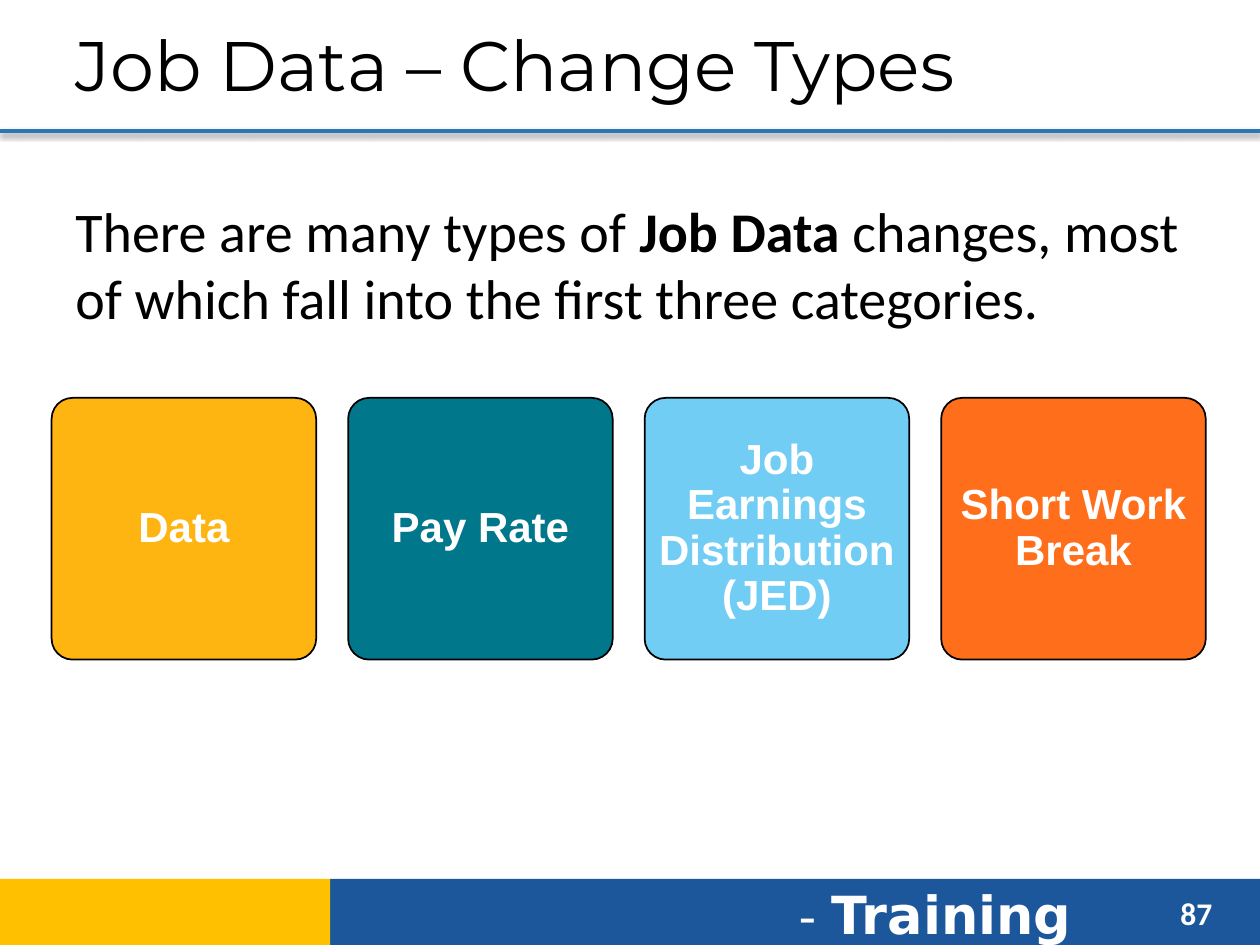
from lxml.etree import SubElement
from pptx import Presentation
from pptx.dml.color import RGBColor
from pptx.enum.shapes import MSO_CONNECTOR, MSO_SHAPE
from pptx.enum.text import MSO_ANCHOR, PP_ALIGN
from pptx.oxml.ns import qn
from pptx.util import Inches, Pt

WIDTH, HEIGHT = Inches(10), Inches(7.5)
BLACK, WHITE = "000000", "FFFFFF"
CARDS = [
    ("Data", "FFB511"),
    ("Pay Rate", "00778B"),
    ("Job Earnings Distribution (JED)", "72CDF4"),
    ("Short Work Break", "FF6E1B"),
]


def color(value):
    """Turn a hex string into a colour."""
    return RGBColor.from_string(value)


def share(left, top, width, height):
    """Turn shares of the slide's size into a box of lengths."""
    return (round(left * WIDTH), round(top * HEIGHT),
            round(width * WIDTH), round(height * HEIGHT))


def set_font(font, name, size, value, bold=False):
    """Set the face, size, colour and weight of a font."""
    font.name, font.size, font.bold = name, Pt(size), bold
    font.color.rgb = color(value)


def add_block(page, box, fill, kind=MSO_SHAPE.RECTANGLE):
    """Add a filled shape without outline or shadow."""
    block = page.shapes.add_shape(kind, *box)
    block.shadow.inherit = False
    block.fill.solid()
    block.fill.fore_color.rgb = color(fill)
    block.line.fill.background()
    return block


def add_text(page, box, spans, name, size, value, anchor=MSO_ANCHOR.TOP):
    """Add a wrapping text box of (text, bold) spans in one font."""
    frame = page.shapes.add_textbox(*box).text_frame
    frame.word_wrap = True
    frame.vertical_anchor = anchor
    para = frame.paragraphs[0]
    set_font(para.font, name, size, value)
    for text, bold in spans:
        span = para.add_run()
        span.text = text
        set_font(span.font, name, size, value, bold)
    return para


def add_header(page, box):
    """Add the title and the shadowed rule along the bottom of the box."""
    left, top, width, height = box
    margin = round(width * 0.05)
    add_text(page, (left + margin, top + round(height * 0.04),
                    width - 2 * margin, round(height * 0.89)),
             [("Job Data – Change Types", False)], "Montserrat", 40, BLACK,
             MSO_ANCHOR.MIDDLE)
    rule = page.shapes.add_connector(
        MSO_CONNECTOR.STRAIGHT, left, top + height, left + width, top + height)
    rule.line.color.rgb = color("2E75B6")
    rule.line.width = Pt(2.25)
    effects = SubElement(rule._element.spPr, qn("a:effectLst"))
    shadow = SubElement(effects, qn("a:outerShdw"), blurRad=str(Pt(3.1)),
                        dist=str(Pt(1.6)), dir="5400000", rotWithShape="0")
    tint = SubElement(shadow, qn("a:srgbClr"), val=BLACK)
    SubElement(tint, qn("a:alpha"), val="38000")


def add_cards(page, box):
    """Spread the change types evenly across the box as rounded cards."""
    left, top, width, height = box
    card_width = Inches(2.1)
    pitch = (width - card_width) / (len(CARDS) - 1)
    for column, (label, fill) in enumerate(CARDS):
        card = add_block(page, (left + round(column * pitch), top, card_width, height),
                         fill, MSO_SHAPE.ROUNDED_RECTANGLE)
        card.adjustments[0] = 0.08
        card.line.color.rgb = color(BLACK)
        card.line.width = Pt(1)
        frame = card.text_frame
        frame.word_wrap = True
        frame.vertical_anchor = MSO_ANCHOR.MIDDLE
        frame.margin_left = frame.margin_right = Inches(0.05)
        para = frame.paragraphs[0]
        para.text = label
        para.alignment = PP_ALIGN.CENTER
        para.line_spacing = 0.9
        set_font(para.font, "Arial", 24, WHITE, True)


def add_footer(page, box):
    """Add the two-colour band with its course name and page number."""
    left, top, width, height = box
    split = round(width * 0.262)
    add_block(page, (left + split, top, width - split, height), "1D579B")
    add_block(page, (left, top, split, height), "FFC000")
    para = add_text(page, (left + round(width * 0.624), top - round(height * 0.05),
                           round(width * 0.28), round(height * 1.15)),
                    [("- ", False), ("Training", True)], "DejaVu Sans", 30, WHITE)
    para.runs[0].font.size = Pt(28)
    add_text(page, (left + round(width * 0.927), top + round(height * 0.14),
                    round(width * 0.06), round(height * 0.75)),
             [("87", True)], "Calibri", 18, WHITE)


def main():
    """Build the slide and save it."""
    deck = Presentation()
    deck.slide_width, deck.slide_height = WIDTH, HEIGHT
    page = deck.slides.add_slide(deck.slide_layouts[6])
    add_footer(page, share(0, 0.93, 1, 0.07))
    add_header(page, share(0, 0, 1, 0.139))
    add_text(page, share(0.05, 0.201, 0.9, 0.692),
             [("There are many types of ", False), ("Job Data ", True),
              ("changes, most of which fall into the first three categories.", False)],
             "Calibri", 32, BLACK)
    add_cards(page, share(0.041, 0.421, 0.916, 0.277))
    deck.save("out.pptx")


if __name__ == "__main__":
    main()
